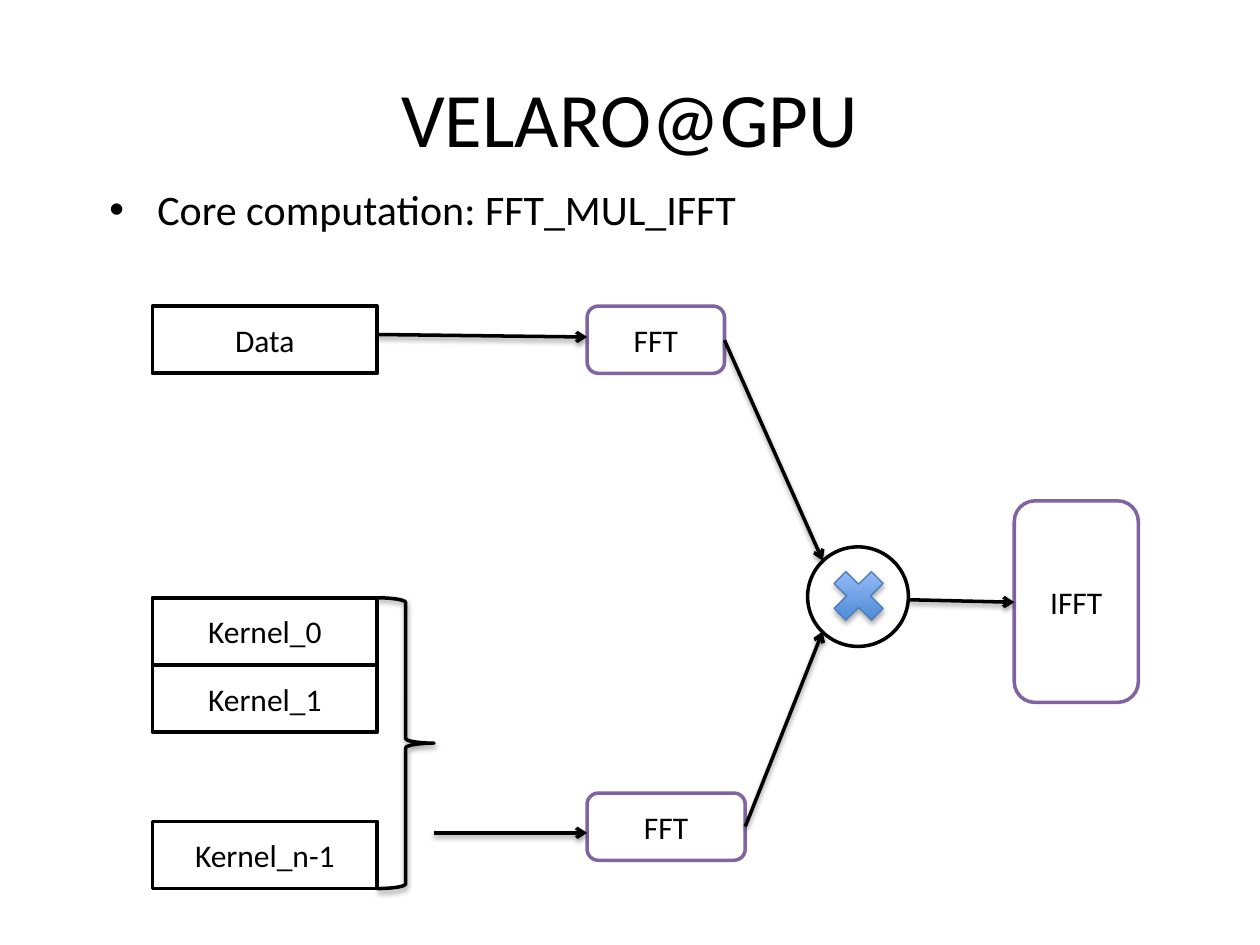
from dataclasses import dataclass

import pptx
import pptx.dml.color
import pptx.enum.shapes
import pptx.enum.text
import pptx.oxml.ns
import pptx.util
from lxml import etree

MSO = pptx.enum.shapes.MSO_SHAPE
ALIGN = pptx.enum.text.PP_ALIGN
ANCHOR = pptx.enum.text.MSO_ANCHOR
BLACK, WHITE, PURPLE = "000000", "FFFFFF", "8064A2"
FONT = "Calibri"

# The slide is a grid of 100 columns by 75 rows of square cells
CELL = pptx.util.Inches(0.1)
COLUMNS, ROWS = 100, 75

# Shared grid lines
STORE_COL, STORE_WIDTH, STAGE_HEIGHT = 12.1, 17.85, 5.33
STORE_RIGHT = STORE_COL + STORE_WIDTH
DATA_ROW, KERNEL_ROW, LAST_KERNEL_ROW = 24.3, 47.45, 65.2
FFT_COL, KERNEL_FFT_ROW = 46.6, 62.95
BRACE_WIDTH = 4.5
BRACE_TIP = STORE_RIGHT + BRACE_WIDTH
CROSS_LEFT, CROSS_TOP, CROSS_BOTTOM = 65.3, 44.5, 50.1


@dataclass(frozen=True)
class Block:
    """A diagram block, placed in grid cells."""
    col: float
    row: float
    width: float
    height: float
    label: str = ""
    kind: MSO = MSO.RECTANGLE
    outline: str = BLACK


@dataclass(frozen=True)
class Arrow:
    """A data flow from one grid point to another."""
    col: float
    row: float
    end_col: float
    end_row: float


def cells(*counts: float) -> list[int]:
    return [round(count * CELL) for count in counts]


def rgb(value: str) -> pptx.dml.color.RGBColor:
    return pptx.dml.color.RGBColor.from_string(value)


def style_text(frame, text: str, size: float, align, anchor) -> None:
    frame.word_wrap = True
    frame.vertical_anchor = anchor
    frame.text = text
    paragraph = frame.paragraphs[0]
    paragraph.alignment = align
    font = paragraph.runs[0].font
    font.name, font.size = FONT, pptx.util.Pt(size)
    font.color.rgb = rgb(BLACK)


def style_line(line, color: str = BLACK, width: float = 2) -> None:
    line.color.rgb = rgb(color)
    line.width = pptx.util.Pt(width)


def child(parent, tag: str, **attributes: str):
    return etree.SubElement(parent, pptx.oxml.ns.qn(tag), **attributes)


def add_shadow(item, opacity: int = 38, distance: float = 1.6) -> None:
    properties = item.element.spPr
    effects = properties.find(pptx.oxml.ns.qn("a:effectLst"))
    if effects is None:
        effects = child(properties, "a:effectLst")
    outer = child(effects, "a:outerShdw", blurRad=str(pptx.util.Pt(3.1)),
                  dist=str(pptx.util.Pt(distance)), dir="5400000", rotWithShape="0")
    color = child(outer, "a:srgbClr", val=BLACK)
    child(color, "a:alpha", val=str(opacity * 1000))


def add_block(slide, block: Block):
    shape = slide.shapes.add_shape(
        block.kind, *cells(block.col, block.row, block.width, block.height))
    shape.shadow.inherit = False
    shape.fill.solid()
    shape.fill.fore_color.rgb = rgb(WHITE)
    style_line(shape.line, block.outline)
    if block.label:
        style_text(shape.text_frame, block.label, 18, ALIGN.CENTER, ANCHOR.MIDDLE)
    return shape


def add_arrow(slide, arrow: Arrow) -> None:
    connector = slide.shapes.add_connector(
        pptx.enum.shapes.MSO_CONNECTOR.STRAIGHT,
        *cells(arrow.col, arrow.row, arrow.end_col, arrow.end_row))
    style_line(connector.line)
    child(connector.element.spPr.find(pptx.oxml.ns.qn("a:ln")), "a:tailEnd", type="arrow")
    add_shadow(connector)


def add_headings(slide) -> None:
    title = slide.shapes.add_textbox(*cells(5, 3, 90, 12.5))
    style_text(title.text_frame, "VELARO@GPU", 44, ALIGN.CENTER, ANCHOR.MIDDLE)

    summary = slide.shapes.add_textbox(*cells(7.7, 14.1, 90, 6.7))
    style_text(summary.text_frame, "Core computation: FFT_MUL_IFFT", 24,
               ALIGN.LEFT, ANCHOR.TOP)
    paragraph = summary.text_frame.paragraphs[0]
    paragraph.space_before = pptx.util.Pt(4.8)
    properties = paragraph._p.get_or_add_pPr()
    indent = pptx.util.Inches(0.38)
    properties.set("marL", str(indent))
    properties.set("indent", str(-indent))
    child(properties, "a:buFont", typeface="Arial")
    child(properties, "a:buChar", char="•")


def add_multiply_sign(slide) -> None:
    cross = add_block(slide, Block(CROSS_LEFT, CROSS_TOP, 5.7, CROSS_BOTTOM - CROSS_TOP,
                                   kind=MSO.MATH_MULTIPLY))
    style_line(cross.line, "4B7EBC", 0.75)
    cross.fill.gradient()
    cross.fill.gradient_angle = 90
    for stop, color in zip(cross.fill.gradient_stops, ("3F80CE", "A4C4FF")):
        stop.color.rgb = rgb(color)
    add_shadow(cross, 35, 1.8)


def add_brace(slide) -> None:
    height = LAST_KERNEL_ROW + STAGE_HEIGHT - KERNEL_ROW
    brace = add_block(slide, Block(STORE_RIGHT, KERNEL_ROW, BRACE_WIDTH, height,
                                   kind=MSO.RIGHT_BRACE))
    brace.fill.background()
    add_shadow(brace)


STAGES = [
    Block(64.1, 43.4, 8, 7.9, kind=MSO.OVAL),
    Block(80.5, 39.75, 9.85, 16, "IFFT", MSO.ROUNDED_RECTANGLE, PURPLE),
    Block(FFT_COL, DATA_ROW, 10.9, STAGE_HEIGHT, "FFT", MSO.ROUNDED_RECTANGLE, PURPLE),
    Block(FFT_COL, KERNEL_FFT_ROW, 12.55, STAGE_HEIGHT, "FFT", MSO.ROUNDED_RECTANGLE, PURPLE),
]
STORES = [
    Block(STORE_COL, row, STORE_WIDTH, STAGE_HEIGHT, label)
    for label, row in (("Data", DATA_ROW), ("Kernel_0", KERNEL_ROW),
                       ("Kernel_1", KERNEL_ROW + STAGE_HEIGHT),
                       ("Kernel_n-1", LAST_KERNEL_ROW))
]
FLOWS = [
    Arrow(57.5, 27, CROSS_LEFT, CROSS_TOP),
    Arrow(59.15, 65.6, CROSS_LEFT, CROSS_BOTTOM),
    Arrow(72.1, 47.6, 80.5, 47.8),
    Arrow(STORE_RIGHT, 26.55, FFT_COL, 26.75),
    Arrow(BRACE_TIP, 66.1, FFT_COL, 66.1),
]


def main() -> None:
    deck = pptx.Presentation()
    deck.slide_width, deck.slide_height = cells(COLUMNS, ROWS)
    slide = deck.slides.add_slide(deck.slide_layouts[6])

    add_headings(slide)
    # Processing stages and stored inputs
    for block in STAGES + STORES:
        add_block(slide, block)
    # Flows between them
    for arrow in FLOWS:
        add_arrow(slide, arrow)
    add_multiply_sign(slide)
    add_brace(slide)
    deck.save("out.pptx")


if __name__ == "__main__":
    main()
